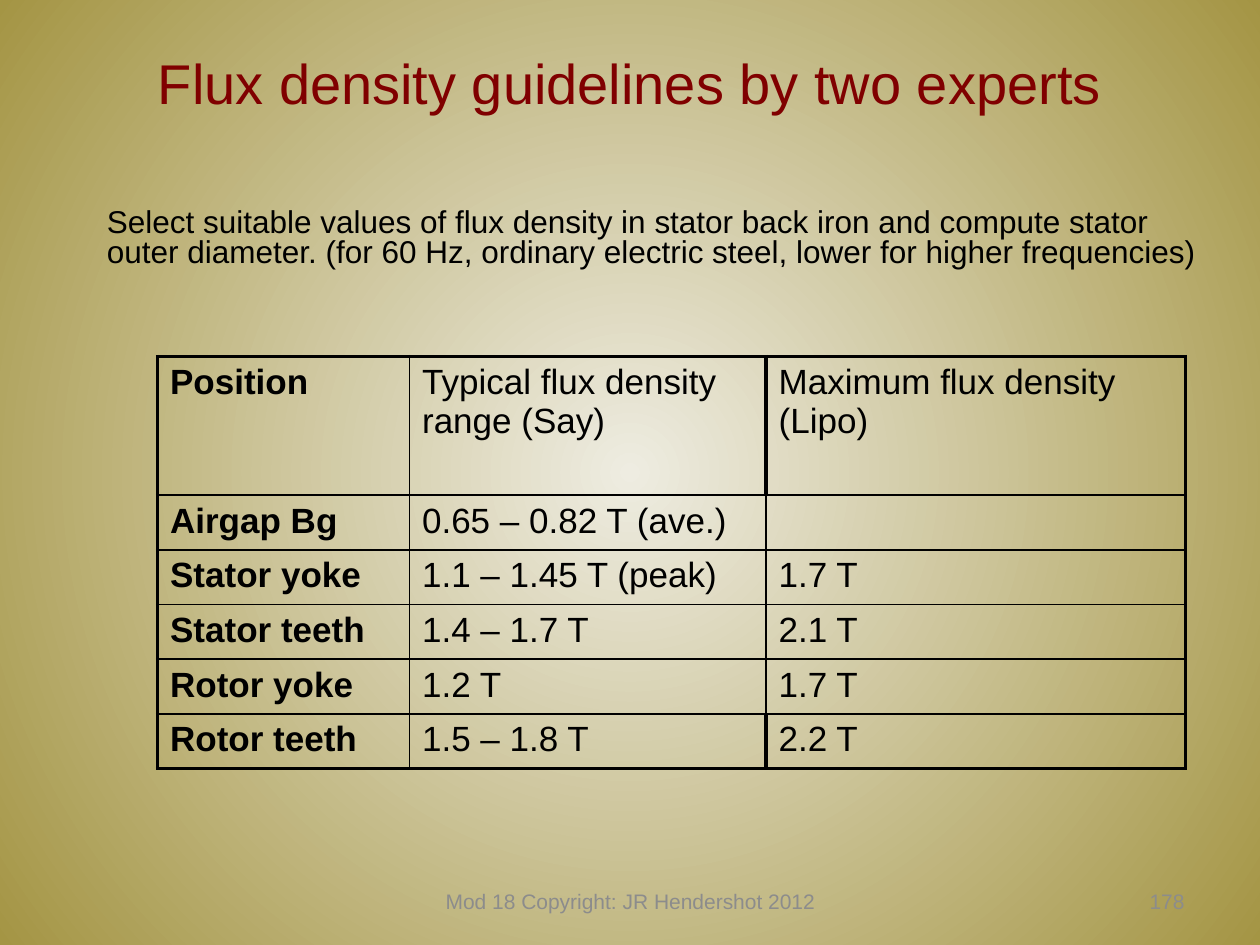
from dataclasses import dataclass

from lxml.etree import SubElement
from pptx import Presentation
from pptx.dml.color import RGBColor
from pptx.enum.text import MSO_ANCHOR as Anchor, PP_ALIGN as Align
from pptx.oxml.ns import qn
from pptx.util import Inches, Pt


@dataclass(frozen=True)
class Theme:
    font: str = "Arial"
    ink: str = "000000"
    title: str = "800000"
    footer: str = "8C8C8C"
    center: str = "EEECE1"
    edge: str = "A49544"
    title_size: float = 32
    body_size: float = 18
    table_size: float = 20
    footer_size: float = 12
    thick: float = 2.25
    thin: float = 1


THEME = Theme()
HEADERS = ("Position", "Typical flux density range (Say)", "Maximum flux density (Lipo)")
LIMITS = (
    ("Airgap Bg", "0.65 – 0.82 T (ave.)", ""),
    ("Stator yoke", "1.1 – 1.45 T (peak)", "1.7 T"),
    ("Stator teeth", "1.4 – 1.7 T", "2.1 T"),
    ("Rotor yoke", "1.2 T", "1.7 T"),
    ("Rotor teeth", "1.5 – 1.8 T", "2.2 T"),
)


def write(frame, text, size, color=THEME.ink, align=Align.LEFT, bold=False):
    para = frame.paragraphs[0]
    para.alignment = align
    span = para.add_run()
    span.text = text
    span.font.name = THEME.font
    span.font.size = Pt(size)
    span.font.bold = bold
    span.font.color.rgb = RGBColor.from_string(color)
    return para


def paint_background(page):
    fill = page.background.fill
    fill.gradient()
    for stop, color in zip(fill.gradient_stops, (THEME.center, THEME.edge)):
        stop.color.rgb = RGBColor.from_string(color)
    gradient = page.element.find(".//" + qn("a:gradFill"))
    gradient.remove(gradient.find(qn("a:lin")))
    circle = SubElement(gradient, qn("a:path"), path="circle")
    SubElement(circle, qn("a:fillToRect"), l="50000", t="50000", r="50000", b="50000")


def add_title(page, box, text):
    title = page.shapes.title
    title.left, title.top, title.width, title.height = map(Inches, box)
    title.text_frame.vertical_anchor = Anchor.MIDDLE
    write(title.text_frame, text, THEME.title_size, THEME.title, Align.CENTER)


def add_label(page, box, text, size, color=THEME.ink, align=Align.LEFT):
    frame = page.shapes.add_textbox(*map(Inches, box)).text_frame
    frame.word_wrap = True
    frame.vertical_anchor = Anchor.MIDDLE
    return write(frame, text, size, color, align)


def set_border(cell, side, width):
    line = SubElement(cell._tc.get_or_add_tcPr(), qn(f"a:ln{side}"), w=str(Pt(width)))
    SubElement(SubElement(line, qn("a:solidFill")), qn("a:srgbClr"), val=THEME.ink)


def add_flux_table(page, box, widths, heights):
    rows = (HEADERS, *LIMITS)
    table = page.shapes.add_table(len(rows), len(HEADERS), *map(Inches, box)).table
    table.first_row = table.horz_banding = False
    for column, width in zip(table.columns, widths):
        column.width = Inches(width)
    for row, height in zip(table.rows, heights):
        row.height = Inches(height)
    last_row, last_col = len(rows) - 1, len(HEADERS) - 1
    for r, texts in enumerate(rows):
        for c, text in enumerate(texts):
            cell = table.cell(r, c)
            end_row = r in (0, last_row)
            heavy = {
                "L": c == 0 or (end_row and c == last_col),
                "R": c == last_col or (end_row and c == last_col - 1),
                "T": r == 0,
                "B": r == last_row,
            }
            for side, is_heavy in heavy.items():
                set_border(cell, side, THEME.thick if is_heavy else THEME.thin)
            cell.fill.background()
            if text:
                write(cell.text_frame, text, THEME.table_size, bold=c == 0)


def main():
    deck = Presentation()
    deck.slide_width, deck.slide_height = Inches(10), Inches(7.5)
    page = deck.slides.add_slide(deck.slide_layouts[5])
    paint_background(page)
    add_label(page, (3.42, 6.95, 3.17, 0.4), "Mod 18 Copyright: JR Hendershot 2012",
              THEME.footer_size, THEME.footer, Align.CENTER)
    add_label(page, (7.17, 6.95, 2.33, 0.4), "178",
              THEME.footer_size, THEME.footer, Align.RIGHT)
    add_title(page, (0.5, 0.3, 9, 0.7), "Flux density guidelines by two experts")
    para = add_label(page, (0.75, 1, 9, 1.8),
                     "Select suitable values of flux density in stator back iron and compute "
                     "stator outer diameter. (for 60 Hz, ordinary electric steel, lower for "
                     "higher frequencies)", THEME.body_size)
    para.line_spacing = 0.8
    add_flux_table(page, (1.25, 2.83, 8.17, 3.27), (2, 2.83, 3.33), (1.1, *[0.43] * 5))
    deck.save("out.pptx")


if __name__ == "__main__":
    main()
